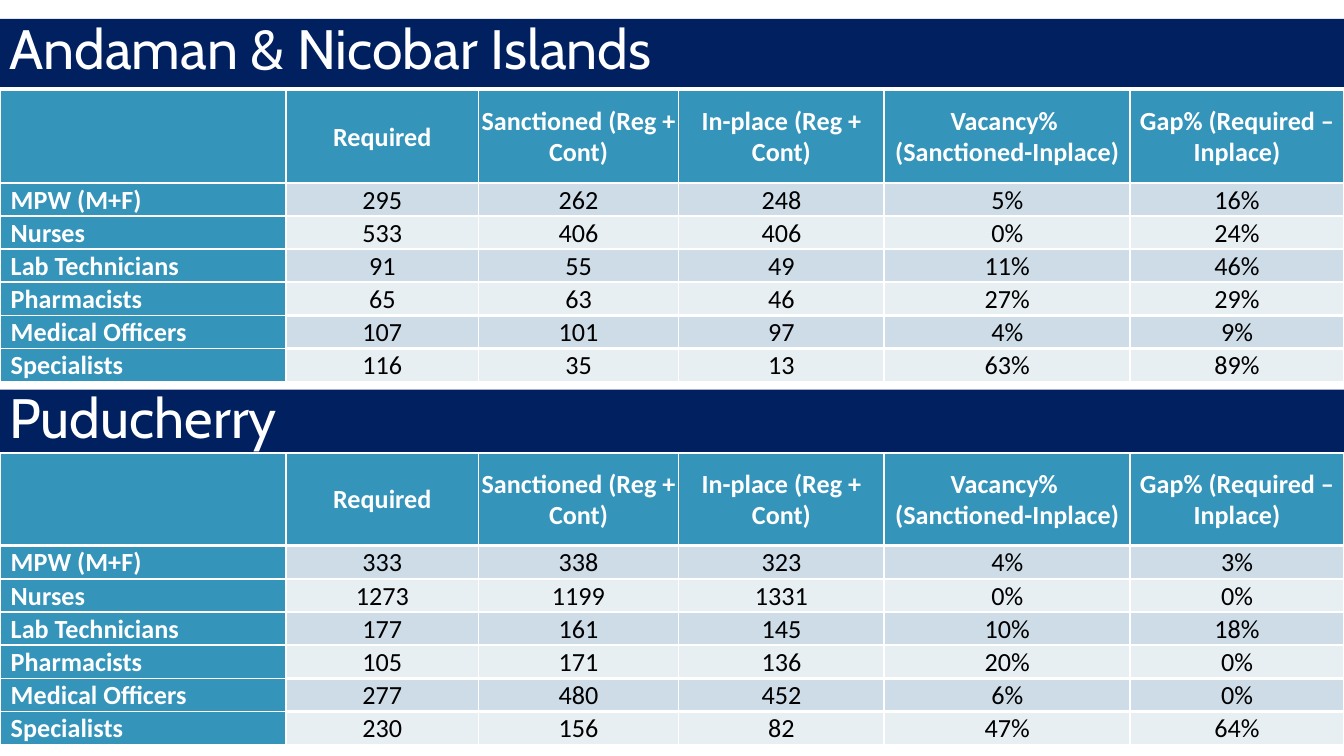
from dataclasses import dataclass

from lxml import etree
from pptx import Presentation
from pptx.dml.color import RGBColor
from pptx.enum import shapes, text
from pptx.oxml import ns
from pptx.util import Inches, Pt


@dataclass(frozen=True)
class Theme:
    navy: str = "002060"
    teal: str = "3494BA"
    bands: tuple = ("CDDCE7", "E8EFF3")
    white: str = "FFFFFF"
    black: str = "000000"
    heading_font: str = "Cabin"
    table_font: str = "Calibri"
    heading_size: float = 29.7
    table_size: float = 14
    thin: float = 1
    thick: float = 1.5


THEME = Theme()
SLIDE_WIDTH = 10
SLIDE_HEIGHT = SLIDE_WIDTH * 9 / 16
BAND_HEIGHT = 0.48
COLUMN_WIDTHS = (2.13, 1.43, 1.49, 1.53, 1.83, 1.59)

HEADERS = ("", "Required", "Sanctioned (Reg + Cont)", "In-place (Reg + Cont)",
           "Vacancy% \n(Sanctioned-Inplace)", "Gap% (Required – Inplace)")
POSTS = ("MPW (M+F)", "Nurses", "Lab Technicians", "Pharmacists",
         "Medical Officers", "Specialists")
TABLE_HEIGHT, HEADER_HEIGHT = 2.17, 0.69
ROW_HEIGHT = (TABLE_HEIGHT - HEADER_HEIGHT) / len(POSTS)
ANDAMAN = (
    (295, 262, 248, "5%", "16%"),
    (533, 406, 406, "0%", "24%"),
    (91, 55, 49, "11%", "46%"),
    (65, 63, 46, "27%", "29%"),
    (107, 101, 97, "4%", "9%"),
    (116, 35, 13, "63%", "89%"),
)
PUDUCHERRY = (
    (333, 338, 323, "4%", "3%"),
    (1273, 1199, 1331, "0%", "0%"),
    (177, 161, 145, "10%", "18%"),
    (105, 171, 136, "20%", "0%"),
    (277, 480, 452, "6%", "0%"),
    (230, 156, 82, "47%", "64%"),
)


def rgb(color):
    return RGBColor.from_string(color)


def style_font(font, name, size, color, bold=False):
    font.name, font.size, font.bold = name, Pt(size), bold
    font.color.rgb = rgb(color)


def format_band(band, top, heading, line_spacing):
    """Make a shape a full-width navy band that holds a region's name."""
    band.left, band.top = Inches(0), Inches(top)
    band.width, band.height = Inches(SLIDE_WIDTH), Inches(BAND_HEIGHT)
    band.fill.solid()
    band.fill.fore_color.rgb = rgb(THEME.navy)
    band.line.fill.background()
    frame = band.text_frame
    frame.text = heading
    frame.word_wrap = True
    frame.auto_size = text.MSO_AUTO_SIZE.NONE
    frame.vertical_anchor = text.MSO_ANCHOR.MIDDLE
    frame.margin_left = frame.margin_right = Inches(0.07)
    frame.margin_top = frame.margin_bottom = Inches(0.04)
    paragraph = frame.paragraphs[0]
    paragraph.alignment = text.PP_ALIGN.LEFT
    paragraph.line_spacing = line_spacing
    style_font(paragraph.runs[0].font, THEME.heading_font, THEME.heading_size, THEME.white)


def add_rule(slide, y):
    rule = slide.shapes.add_connector(
        shapes.MSO_CONNECTOR.STRAIGHT, Inches(0), Inches(y), Inches(SLIDE_WIDTH), Inches(y))
    rule.line.color.rgb = rgb(THEME.navy)
    rule.line.width = Pt(3)
    etree.SubElement(rule.element.spPr, ns.qn("a:effectLst"))


def set_borders(cell, top, bottom):
    properties = cell._tc.get_or_add_tcPr()
    widths = {"lnL": THEME.thin, "lnR": THEME.thin, "lnT": top, "lnB": bottom}
    for side, width in widths.items():
        border = etree.SubElement(properties, ns.qn(f"a:{side}"), w=str(Pt(width)))
        fill = etree.SubElement(border, ns.qn("a:solidFill"))
        etree.SubElement(fill, ns.qn("a:srgbClr"), val=THEME.white)


def format_cell(cell, value, row, column):
    is_header, is_label = row == 0, column == 0
    emphasised = is_header or is_label
    thin_top = is_header or (is_label and row > 1)
    thin_bottom = row == len(POSTS) or (is_label and not is_header)
    set_borders(cell, THEME.thin if thin_top else THEME.thick,
                THEME.thin if thin_bottom else THEME.thick)
    cell.fill.solid()
    cell.fill.fore_color.rgb = rgb(THEME.teal if emphasised else THEME.bands[(row - 1) % 2])
    cell.vertical_anchor = text.MSO_ANCHOR.MIDDLE
    cell.margin_left = Inches(0.08 if is_label else 0.01)
    cell.margin_right = cell.margin_top = Inches(0.01)
    cell.margin_bottom = Inches(0)
    cell.text_frame.text = str(value)
    for paragraph in cell.text_frame.paragraphs:
        paragraph.alignment = text.PP_ALIGN.LEFT if is_label else text.PP_ALIGN.CENTER
        for run in paragraph.runs:
            style_font(run.font, THEME.table_font, THEME.table_size,
                       THEME.white if emphasised else THEME.black, emphasised)


def add_staff_table(slide, top, figures):
    rows = [HEADERS] + [(post, *values) for post, values in zip(POSTS, figures)]
    table = slide.shapes.add_table(
        len(rows), len(HEADERS), Inches(0), Inches(top),
        Inches(SLIDE_WIDTH), Inches(TABLE_HEIGHT)).table
    for column, width in zip(table.columns, COLUMN_WIDTHS):
        column.width = Inches(width)
    for r, values in enumerate(rows):
        table.rows[r].height = Inches(ROW_HEIGHT if r else HEADER_HEIGHT)
        for c, value in enumerate(values):
            format_cell(table.cell(r, c), value, r, c)


def main():
    deck = Presentation()
    deck.slide_width, deck.slide_height = Inches(SLIDE_WIDTH), Inches(SLIDE_HEIGHT)
    slide = deck.slides.add_slide(deck.slide_layouts[5])

    format_band(slide.shapes.title, 0.14, "Andaman & Nicobar Islands", 0.9)
    add_rule(slide, 0.63)
    add_staff_table(slide, 0.67, ANDAMAN)

    puducherry_band = slide.shapes.add_shape(
        shapes.MSO_SHAPE.RECTANGLE, Inches(0), Inches(2.9),
        Inches(SLIDE_WIDTH), Inches(BAND_HEIGHT))
    puducherry_band.shadow.inherit = False
    format_band(puducherry_band, 2.9, "Puducherry", 0.8)
    add_staff_table(slide, 3.37, PUDUCHERRY)

    deck.save("out.pptx")


if __name__ == "__main__":
    main()
